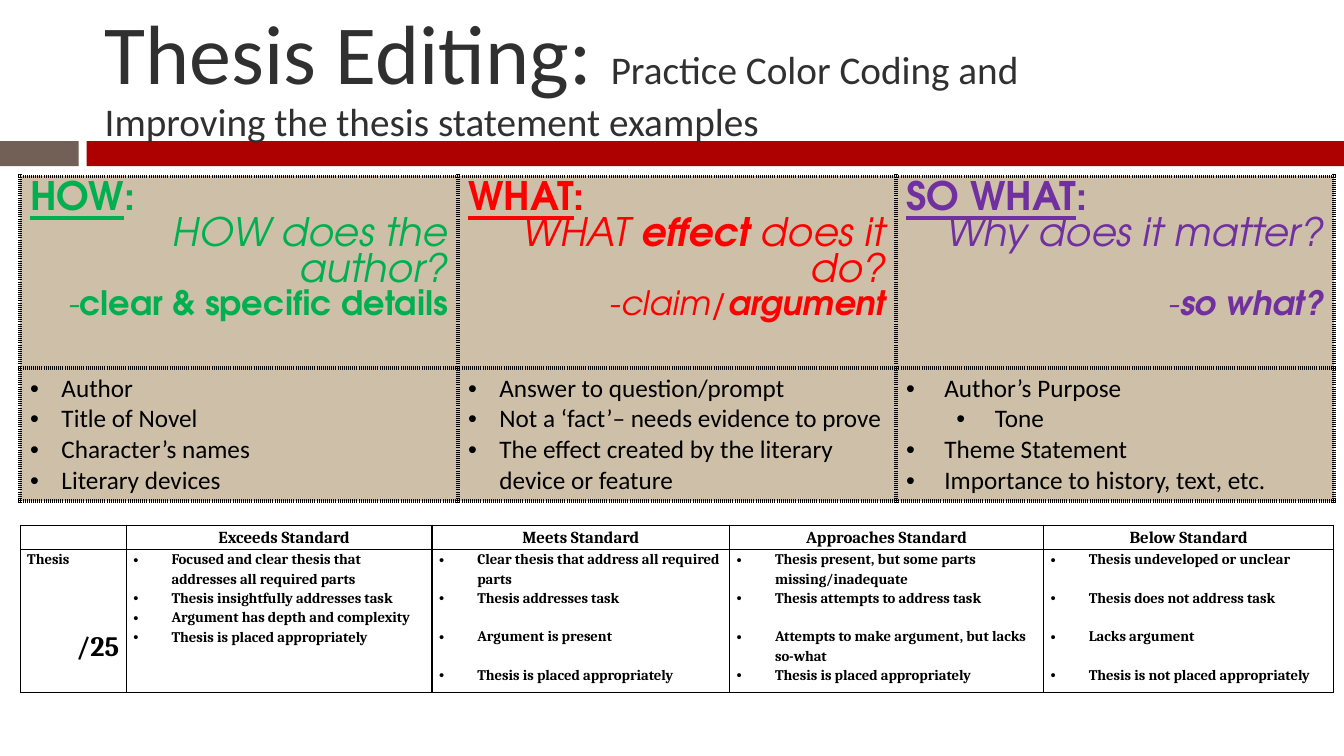
from dataclasses import dataclass
from pptx import Presentation
from pptx.dml.color import RGBColor
from pptx.enum.shapes import MSO_SHAPE as Shapes
from pptx.enum.text import MSO_ANCHOR as Anchor, PP_ALIGN as Align
from pptx.oxml import parse_xml
from pptx.oxml.ns import nsdecls
from pptx.util import Inches, Pt


def colour(hex_text):
    return RGBColor.from_string(hex_text)


@dataclass
class Span:
    text: str
    size: float
    font: str
    ink: str = "000000"
    bold: bool = False
    italic: bool = False
    underline: bool = False


@dataclass
class Para:
    spans: list
    align: Align = Align.LEFT
    left: float = 0        # inches
    bullet: float = 0      # hanging indent in inches
    before: float = 0      # points
    spacing: float = 1.0


class Page:
    """A slide on a grid of 100 columns by 100 rows."""

    def __init__(self, deck):
        self.deck = deck
        self.page = deck.slides.add_slide(deck.slide_layouts[6])

    def across(self, columns):
        return int(self.deck.slide_width * columns / 100)

    def down(self, rows):
        return int(self.deck.slide_height * rows / 100)

    def place(self, left, top, width, height):
        return self.across(left), self.down(top), self.across(width), self.down(height)

    def bar(self, area, fill):
        box = self.page.shapes.add_shape(Shapes.RECTANGLE, *self.place(*area))
        box.shadow.inherit = False
        box.fill.solid()
        box.fill.fore_color.rgb = colour(fill)
        box.line.fill.background()

    def text(self, area, paras):
        frame = self.page.shapes.add_textbox(*self.place(*area)).text_frame
        frame.word_wrap = True
        frame.vertical_anchor = Anchor.TOP
        frame.margin_top = Inches(0.03)
        self.fill_text(frame, paras)

    def fill_text(self, frame, paras):
        for index, content in enumerate(paras):
            para = frame.add_paragraph() if index else frame.paragraphs[0]
            para.alignment = content.align
            para.line_spacing = content.spacing
            para.space_before = Pt(content.before)
            props = para._p.get_or_add_pPr()
            props.set("marL", str(Inches(content.left + content.bullet)))
            props.set("indent", str(-Inches(content.bullet)))
            if content.bullet:
                props.append(parse_xml(f'<a:buFont {nsdecls("a")} typeface="Arial"/>'))
                props.append(parse_xml(f'<a:buChar {nsdecls("a")} char="•"/>'))
            for span in content.spans:
                run = para.add_run()
                run.text = span.text
                run.font.name, run.font.size = span.font, Pt(span.size)
                run.font.bold, run.font.italic = span.bold, span.italic
                run.font.underline = span.underline
                run.font.color.rgb = colour(span.ink)

    def table(self, left, top, widths, heights, cells, border, dash, fill=None, inset=None):
        area = self.place(left, top, sum(widths), sum(heights))
        table = self.page.shapes.add_table(len(heights), len(widths), *area).table
        table.first_row = table.horz_banding = False
        for column, width in zip(table.columns, widths):
            column.width = self.across(width)
        for row, height, contents in zip(table.rows, heights, cells):
            row.height = self.down(height)
            for cell, paras in zip(row.cells, contents):
                if fill:
                    cell.fill.solid()
                    cell.fill.fore_color.rgb = colour(fill)
                else:
                    cell.fill.background()
                if inset:
                    cell.margin_left = cell.margin_right = Inches(inset)
                    cell.margin_top = cell.margin_bottom = 0
                self.outline(cell, border, dash)
                self.fill_text(cell.text_frame, paras)
                if not paras:
                    end = cell.text_frame.paragraphs[0]._p.get_or_add_endParaRPr()
                    end.set("sz", "1000")

    def outline(self, cell, border, dash):
        props = cell._tc.get_or_add_tcPr()
        for index, side in enumerate("LRTB"):
            props.insert(index, parse_xml(
                f'<a:ln{side} {nsdecls("a")} w="{Pt(border)}"><a:solidFill>'
                f'<a:srgbClr val="000000"/></a:solidFill><a:prstDash val="{dash}"/></a:ln{side}>'))


# Text styles
def heading(word, ink, question, answer, gap=0):
    """Question and answer are lists of (text, bold, italic)."""
    def spans(parts, size):
        return [Span(text, size, "TeX Gyre Adventor", ink, bold, italic)
                for text, bold, italic in parts]
    title = spans([(word, True, False), (":", True, False)], 28)
    title[0].underline = True
    return [Para(title), Para(spans(question, 28), Align.RIGHT),
            Para(spans(answer, 24), Align.RIGHT, before=gap)]


def hint(text, bullet=0.31, left=0):
    return Para([Span(text, 18, "Calibri")], left=left, bullet=bullet)


def rubric(text, size=10.5, **layout):
    return Para([Span(text, size, "Cambria", bold=True)], spacing=1.15, **layout)


def criteria(*lines):
    """Each line is (text, number of free lines above it)."""
    return [rubric(text, bullet=0.38, before=13.7 * free) for text, free in lines]


def level(text, left=0):
    return [rubric(text, 12, align=Align.CENTER, left=left)]


def main():
    deck = Presentation()
    deck.slide_width, deck.slide_height = Inches(13.33), Inches(7.5)
    page = Page(deck)

    # Title and bars
    page.bar((0, 18.67, 5.85, 3.33), "726056")
    page.bar((6.45, 18.67, 93.55, 3.33), "AD0101")
    page.text((7.05, 1.2, 81.17, 16.67), [Para([
        Span("Thesis Editing: ", 60, "Calibri", "303030"),
        Span("Practice Color Coding and Improving the thesis statement examples",
             28, "Calibri", "303030")], spacing=0.9)])

    # Three parts of a thesis
    headings = [
        heading("HOW", "00B050", [("HOW does the author?", False, True)],
                [("-", False, True), ("clear & specific details", True, False)]),
        heading("WHAT", "FF0000",
                [("WHAT ", False, True), ("effect", True, True), (" does it do?", False, True)],
                [("-claim/", False, True), ("argument", True, True)]),
        heading("SO WHAT", "7030A0", [("Why does it matter?", False, True)],
                [("-", False, True), ("so what?", True, True)], gap=26)]
    hints = [
        [hint(text) for text in
         ("Author", "Title of Novel", "Character’s names", "Literary devices")],
        [hint(text) for text in
         ("Answer to question/prompt", "Not a ‘fact’– needs evidence to prove",
          "The effect created by the literary device or feature")],
        [hint("Author’s Purpose", 0.38), hint("Tone", 0.38, left=0.5),
         hint("Theme Statement", 0.38), hint("Importance to history, text, etc.", 0.38)]]
    page.table(1.5, 23.33, [97.75 / 3] * 3, [19.8, 17.6], [headings, hints],
               border=3, dash="sysDot", fill="CDBFA8")

    # Grading rubric
    levels = [[], level("Exceeds Standard", left=0.1), level("Meets Standard"),
              level("Approaches Standard"), level("Below Standard")]
    grades = [
        [rubric("Thesis"), rubric("/25", 20, align=Align.RIGHT, before=41)],
        criteria(("Focused and clear thesis that addresses all required parts", 0),
                 ("Thesis insightfully addresses task", 0),
                 ("Argument has depth and complexity", 0),
                 ("Thesis is placed appropriately", 0)),
        criteria(("Clear thesis that address all required parts", 0),
                 ("Thesis addresses task", 0),
                 ("Argument is present", 1),
                 ("Thesis is placed appropriately", 1)),
        criteria(("Thesis present, but some parts missing/inadequate", 0),
                 ("Thesis attempts to address task", 0),
                 ("Attempts to make argument, but lacks so-what", 1),
                 ("Thesis is placed appropriately", 0)),
        criteria(("Thesis undeveloped or unclear", 0),
                 ("Thesis does not address task", 1),
                 ("Lacks argument", 1),
                 ("Thesis is not placed appropriately", 1))]
    page.table(1.5, 69.47, [7.9, 22.75, 22.15, 23.35, 21.6], [3.2, 18.93],
               [levels, grades], border=1, dash="solid", inset=0.07)

    deck.save("out.pptx")


if __name__ == "__main__":
    main()
